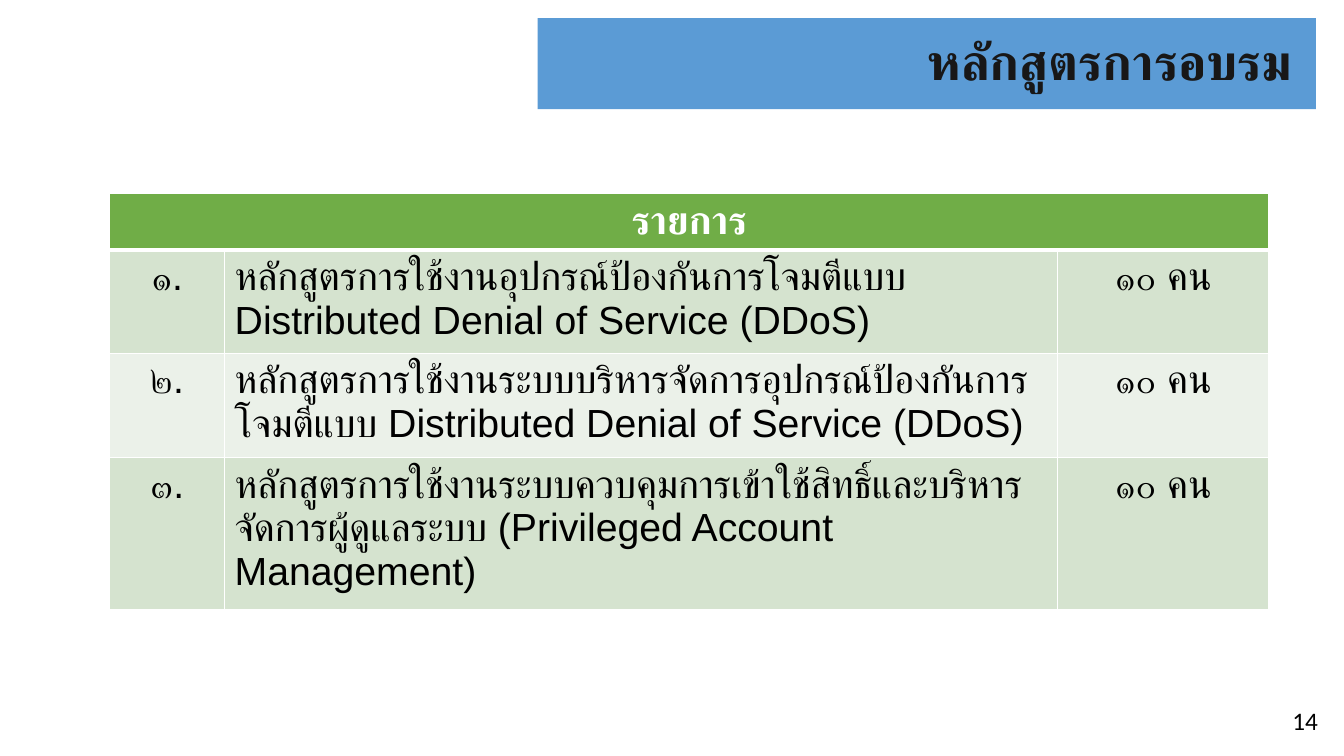
from typing import NamedTuple

from lxml import etree
from pptx import Presentation
from pptx.dml.color import RGBColor
from pptx.enum.shapes import MSO_SHAPE
from pptx.enum.text import MSO_ANCHOR, PP_ALIGN
from pptx.oxml.ns import qn
from pptx.util import Pt

RECTANGLE = MSO_SHAPE.RECTANGLE
MIDDLE = MSO_ANCHOR.MIDDLE
LEFT, CENTER, RIGHT = PP_ALIGN.LEFT, PP_ALIGN.CENTER, PP_ALIGN.RIGHT

WHITE, BLACK = "FFFFFF", "000000"
HEADER_GREEN = "70AD47"
BAND_FILLS = ("D5E3CF", "EBF1E9")
COLUMN_WIDTHS = (82, 595, 151)
HEADER_HEIGHT = 40


class Course(NamedTuple):
    number: str
    title: str
    seats: str
    height: float


COURSES = (
    Course("๑.", "หลักสูตรการใช้งานอุปกรณ์ป้องกันการโจมตีแบบ "
           "Distributed Denial of Service (DDoS)", "๑๐ คน", 74),
    Course("๒.", "หลักสูตรการใช้งานระบบบริหารจัดการอุปกรณ์ป้องกันการโจมตีแบบ "
           "Distributed Denial of Service (DDoS)", "๑๐ คน", 74.5),
    Course("๓.", "หลักสูตรการใช้งานระบบควบคุมการเข้าใช้สิทธิ์และบริหารจัดการผู้ดูแลระบบ "
           "(Privileged Account Management)", "๑๐ คน", 108.5),
)


def rgb(value: str) -> RGBColor:
    return RGBColor.from_string(value)


def write(frame, text: str, align, color: str, **font_format) -> None:
    """Fill the first paragraph, using one typeface for Latin and Thai."""
    paragraph = frame.paragraphs[0]
    paragraph.alignment = align
    run = paragraph.add_run()
    run.text = text
    run.font.color.rgb = rgb(color)
    for attribute, value in font_format.items():
        setattr(run.font, attribute, value)
    etree.SubElement(run.font._element, qn("a:cs"), typeface=run.font.name)


def style_cell(cell, fill: str, bottom_width: float) -> None:
    properties = cell._tc.get_or_add_tcPr()
    widths = {"a:lnL": 1, "a:lnR": 1, "a:lnT": 1, "a:lnB": bottom_width}
    for side, width in widths.items():
        line = etree.SubElement(properties, qn(side), w=str(Pt(width)))
        solid = etree.SubElement(line, qn("a:solidFill"))
        etree.SubElement(solid, qn("a:srgbClr"), val=WHITE)
    cell.fill.solid()
    cell.fill.fore_color.rgb = rgb(fill)


def add_title(slide) -> None:
    banner = slide.shapes.add_shape(RECTANGLE, Pt(384), Pt(13), Pt(556), Pt(65))
    banner.shadow.inherit = False
    banner.fill.solid()
    banner.fill.fore_color.rgb = rgb("5B9BD5")
    banner.line.fill.background()
    frame = banner.text_frame
    frame.word_wrap = True
    frame.vertical_anchor = MIDDLE
    write(frame, "หลักสูตรการอบรม ", RIGHT, "181717",
          name="Arial", size=Pt(36), bold=True)
    frame.paragraphs[0].line_spacing = 0.9


def add_course_table(slide) -> None:
    height = HEADER_HEIGHT + sum(course.height for course in COURSES)
    table = slide.shapes.add_table(
        len(COURSES) + 1, len(COLUMN_WIDTHS),
        Pt(78.5), Pt(138.5), Pt(sum(COLUMN_WIDTHS)), Pt(height)).table
    for column, width in zip(table.columns, COLUMN_WIDTHS):
        column.width = Pt(width)

    table.rows[0].height = Pt(HEADER_HEIGHT)
    for cell in table.rows[0].cells:
        style_cell(cell, HEADER_GREEN, 3)
    header = table.cell(0, 0)
    header.merge(table.cell(0, len(COLUMN_WIDTHS) - 1))
    write(header.text_frame, "รายการ", CENTER, WHITE,
          name="Arial", size=Pt(28), bold=True)

    for index, course in enumerate(COURSES):
        row = table.rows[index + 1]
        row.height = Pt(course.height)
        texts = (course.number, course.title, course.seats)
        for cell, text, align in zip(row.cells, texts, (CENTER, LEFT, CENTER)):
            style_cell(cell, BAND_FILLS[index % len(BAND_FILLS)], 1)
            write(cell.text_frame, text, align, BLACK,
                  name="Arial", size=Pt(28), bold=False)


def add_page_number(slide) -> None:
    page_number = slide.shapes.add_textbox(Pt(916), Pt(500.5), Pt(34.5), Pt(29))
    page_number.text_frame.word_wrap = True
    write(page_number.text_frame, "14", LEFT, BLACK, name="Calibri", size=Pt(18))


def main() -> None:
    presentation = Presentation()
    presentation.slide_width, presentation.slide_height = Pt(960), Pt(540)
    slide = presentation.slides.add_slide(presentation.slide_layouts[6])
    add_title(slide)
    add_course_table(slide)
    add_page_number(slide)
    presentation.save("out.pptx")


if __name__ == "__main__":
    main()
